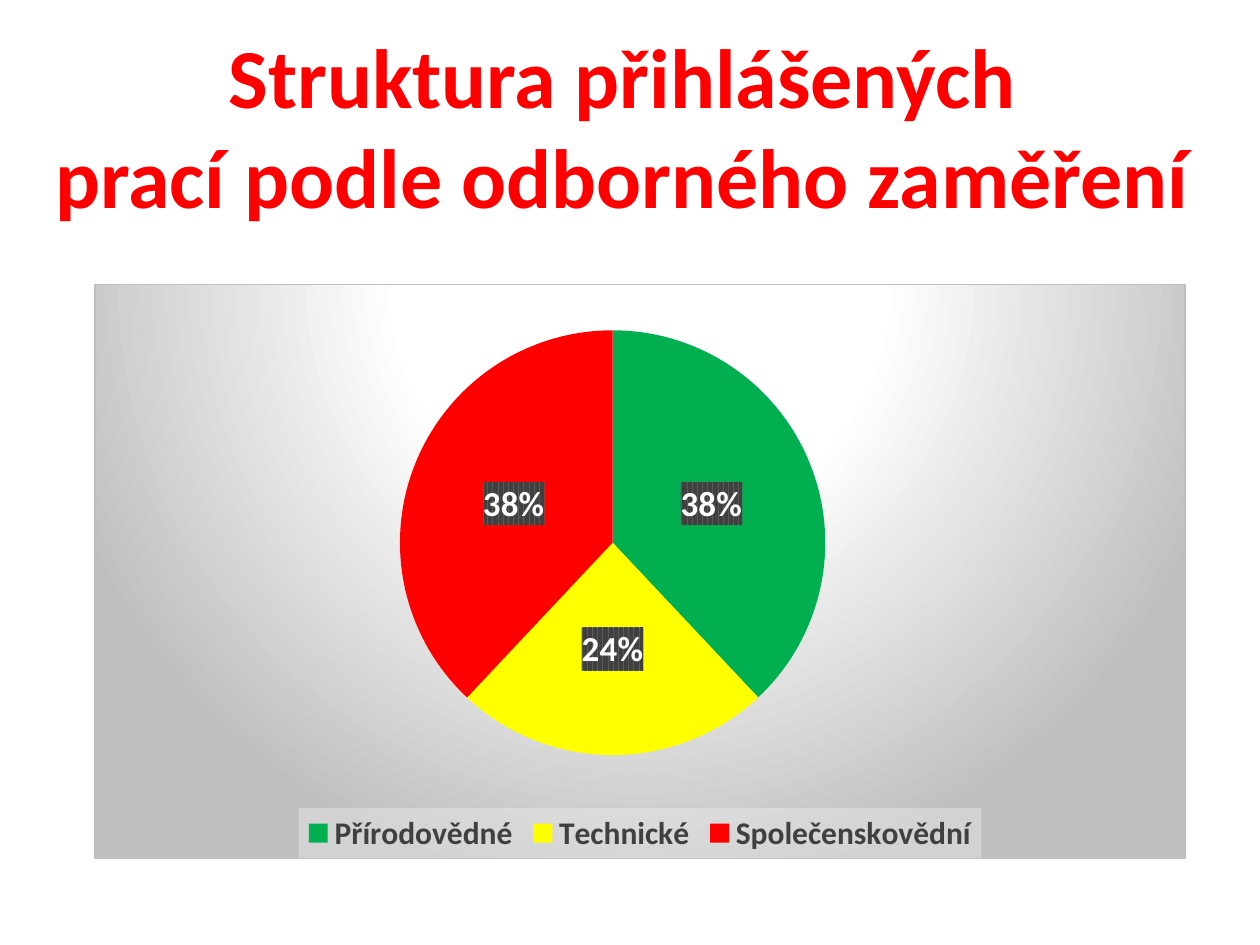
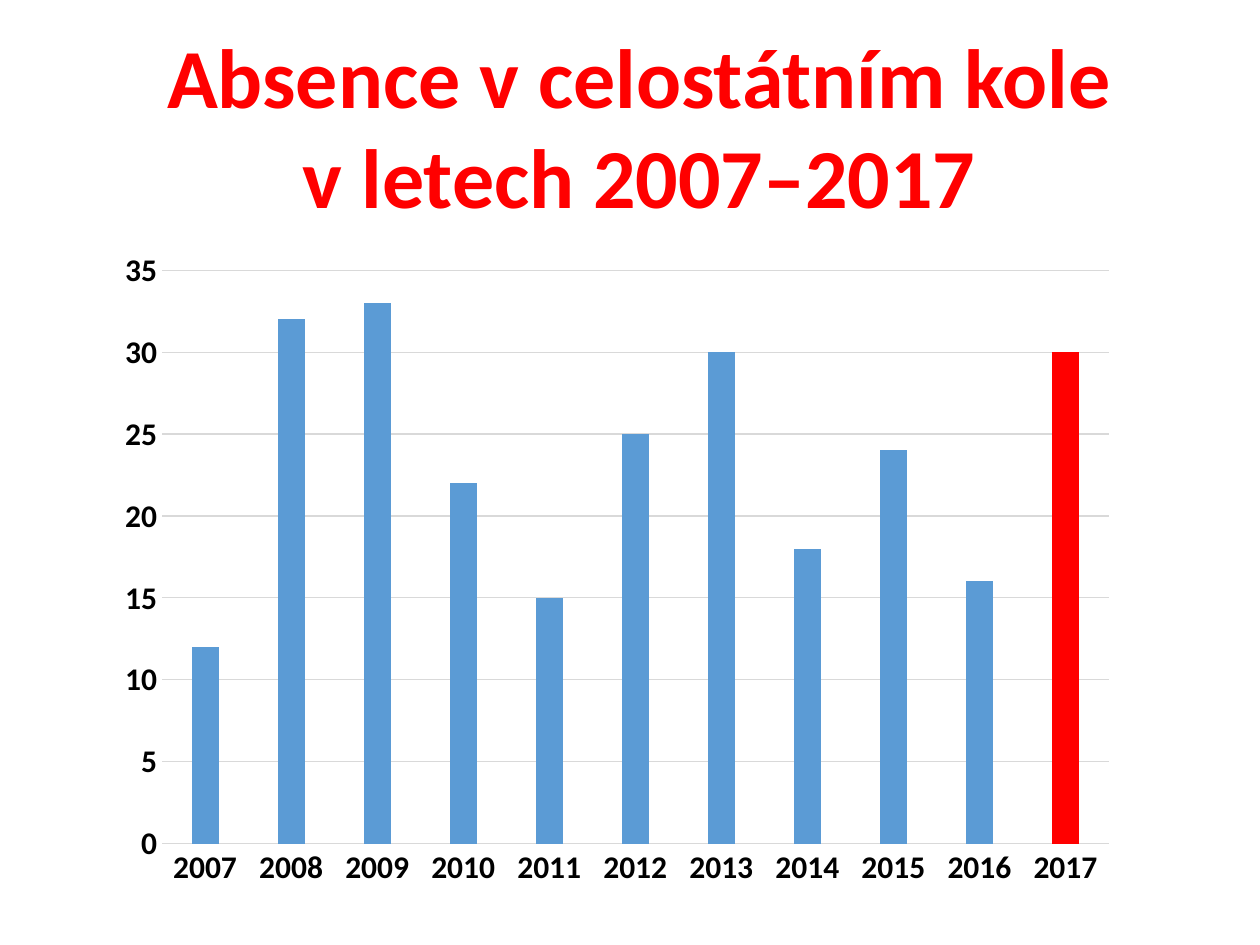
"""Builds two slides on a student competition: entries by field and absences by year."""
from dataclasses import dataclass

from lxml import etree
from pptx import Presentation
from pptx.chart.data import CategoryChartData
from pptx.dml.color import RGBColor
from pptx.enum.chart import XL_CHART_TYPE as ChartType
from pptx.enum.chart import XL_LABEL_POSITION as LabelPosition
from pptx.enum.chart import XL_LEGEND_POSITION as LegendPosition
from pptx.enum.chart import XL_TICK_MARK as TickMark
from pptx.enum.text import MSO_ANCHOR as Anchor
from pptx.enum.text import MSO_AUTO_SIZE as AutoSize
from pptx.enum.text import PP_ALIGN as Align
from pptx.oxml import parse_xml
from pptx.oxml.ns import qn
from pptx.util import Cm, Pt


@dataclass(frozen=True)
class Theme:
    """Colours and type sizes shared by the slides."""
    font: str = "Calibri"
    red: str = "FF0000"
    green: str = "00B050"
    yellow: str = "FFFF00"
    blue: str = "5B9BD5"
    black: str = "000000"
    dark: str = "404040"
    white: str = "FFFFFF"
    pale: str = "F2F2F2"
    silver: str = "BFBFBF"
    grid: str = "D9D9D9"
    title_size: int = 48
    label_size: int = 20
    axis_size: int = 18
    base_size: int = 10
    line_width: float = 0.75


THEME = Theme()
SLIDE_SIZE = (25.4, 19.05)

FIELDS = {
    "title": ["Struktura přihlášených", "prací podle odborného zaměření"],
    "title_box": (0, 0.36, 25.1, 4.37),
    "chart_box": (1.9, 5.72, 22, 11.6),
    "values": {"Přírodovědné": 38, "Technické": 24, "Společenskovědní": 38},
    "colors": [THEME.green, THEME.yellow, THEME.red],
    "plot": {"x": 0, "y": 0.08, "w": 0.95, "h": 0.74},
}
ABSENCES = {
    "title": ["Absence v celostátním kole", "v letech 2007–2017"],
    "title_box": (3.02, 0.36, 19.74, 4.37),
    "chart_box": (2.11, 4.8, 20.65, 13.34),
    "first_year": 2007,
    "values": [12, 32, 33, 22, 15, 25, 30, 18, 24, 16, 30],
}

DRAWING = "http://schemas.openxmlformats.org/drawingml/2006/main"
CHART = "http://schemas.openxmlformats.org/drawingml/2006/chart"


def solid_color(color, alpha=100):
    return f'<a:srgbClr val="{color}"><a:alpha val="{alpha * 1000}"/></a:srgbClr>'


def radial_fill():
    stops = [(0, THEME.white), (39, THEME.white), (100, THEME.silver)]
    listed = "".join(f'<a:gs pos="{place * 1000}">{solid_color(color)}</a:gs>' for place, color in stops)
    return (f'<a:gradFill><a:gsLst>{listed}</a:gsLst><a:path path="circle">'
            '<a:fillToRect l="50000" t="-80000" r="50000" b="180000"/></a:path></a:gradFill>'
            f'<a:ln w="{Pt(THEME.line_width)}"><a:solidFill>{solid_color(THEME.silver)}</a:solidFill></a:ln>')


def striped_fill():
    return (f'<a:pattFill prst="dkVert"><a:fgClr>{solid_color(THEME.dark)}</a:fgClr>'
            f'<a:bgClr>{solid_color("595959")}</a:bgClr></a:pattFill>')


def paint(element, fill):
    """Put shape properties in front of the text properties of a chart part."""
    properties = parse_xml(f'<c:spPr xmlns:c="{CHART}" xmlns:a="{DRAWING}">{fill}</c:spPr>')
    element.find(qn("c:txPr")).addprevious(properties)


def style_font(font, size, color, bold=True):
    font.name, font.size, font.bold = THEME.font, Pt(size), bold
    font.color.rgb = RGBColor.from_string(color)


def fill_solid(part, color):
    part.format.fill.solid()
    part.format.fill.fore_color.rgb = RGBColor.from_string(color)


def line_solid(line, color):
    line.color.rgb = RGBColor.from_string(color)
    line.width = Pt(THEME.line_width)


def write(frame, lines, size, color, bold=True, align=Align.CENTER, wrap=True):
    frame.auto_size, frame.word_wrap = AutoSize.NONE, wrap
    frame.vertical_anchor = Anchor.TOP
    for index, line in enumerate(lines):
        paragraph = frame.paragraphs[0] if index == 0 else frame.add_paragraph()
        paragraph.alignment = align
        run = paragraph.add_run()
        run.text = line
        style_font(run.font, size, color, bold)


def add_slide(presentation, content, wrap=True):
    slide = presentation.slides.add_slide(presentation.slide_layouts[5])
    title = slide.shapes.title
    title.left, title.top, title.width, title.height = map(Cm, content["title_box"])
    write(title.text_frame, content["title"], THEME.title_size, THEME.red, wrap=wrap)
    return slide


def add_chart(slide, kind, box, categories, values):
    data = CategoryChartData()
    data.categories = categories
    data.add_series("Series 1", values)
    chart = slide.shapes.add_chart(kind, *map(Cm, box), data).chart
    chart.has_title = chart.has_legend = False
    style_font(chart.font, THEME.base_size, THEME.black, bold=False)
    return chart


def place_plot(chart, plot):
    """Fix the inner plot area as fractions of the chart."""
    area = chart.element.find(".//" + qn("c:plotArea"))
    for automatic in area.findall(qn("c:layout")):
        area.remove(automatic)
    layout = etree.Element(qn("c:layout"))
    manual = etree.SubElement(layout, qn("c:manualLayout"))
    settings = {"layoutTarget": "inner", "xMode": "edge", "yMode": "edge", **plot}
    for name, value in settings.items():
        etree.SubElement(manual, qn(f"c:{name}")).set("val", str(value))
    area.insert(0, layout)


def build_fields(presentation):
    slide = add_slide(presentation, FIELDS)
    values = FIELDS["values"]
    chart = add_chart(slide, ChartType.PIE, FIELDS["chart_box"], list(values), list(values.values()))
    paint(chart.element, radial_fill())
    place_plot(chart, FIELDS["plot"])

    plot = chart.plots[0]
    for index, color in enumerate(FIELDS["colors"]):
        fill_solid(plot.series[0].points[index], color)

    labels = plot.series[0].data_labels
    style_font(labels.font, THEME.label_size, THEME.white)
    labels.show_percentage, labels.show_value = True, False
    labels.number_format, labels.number_format_is_linked = "0%", False
    labels.position = LabelPosition.CENTER
    paint(labels.font._element.getparent().getparent().getparent().getparent(), striped_fill())

    chart.has_legend = True
    legend = chart.legend
    legend.position, legend.include_in_layout = LegendPosition.BOTTOM, False
    style_font(legend.font, THEME.axis_size, THEME.dark)
    paint(chart.element.find(".//" + qn("c:legend")),
          f"<a:solidFill>{solid_color(THEME.pale, alpha=39)}</a:solidFill>")


def build_absences(presentation):
    slide = add_slide(presentation, ABSENCES, wrap=False)
    values = ABSENCES["values"]
    years = [str(ABSENCES["first_year"] + index) for index in range(len(values))]
    chart = add_chart(slide, ChartType.COLUMN_CLUSTERED, ABSENCES["chart_box"], years, values)

    plot = chart.plots[0]
    plot.gap_width, plot.overlap, plot.vary_by_categories = 219, -27, False
    fill_solid(plot.series[0], THEME.blue)
    fill_solid(plot.series[0].points[len(values) - 1], THEME.red)

    for axis in (chart.category_axis, chart.value_axis):
        axis.major_tick_mark = axis.minor_tick_mark = TickMark.NONE
        style_font(axis.tick_labels.font, THEME.axis_size, THEME.black)
    line_solid(chart.category_axis.format.line, THEME.grid)
    scale = chart.value_axis
    scale.minimum_scale, scale.maximum_scale, scale.major_unit = 0, 35, 5
    scale.format.line.fill.background()
    line_solid(scale.major_gridlines.format.line, THEME.grid)


def main():
    presentation = Presentation()
    presentation.slide_width, presentation.slide_height = map(Cm, SLIDE_SIZE)
    build_fields(presentation)
    build_absences(presentation)
    presentation.save("out.pptx")


if __name__ == "__main__":
    main()
